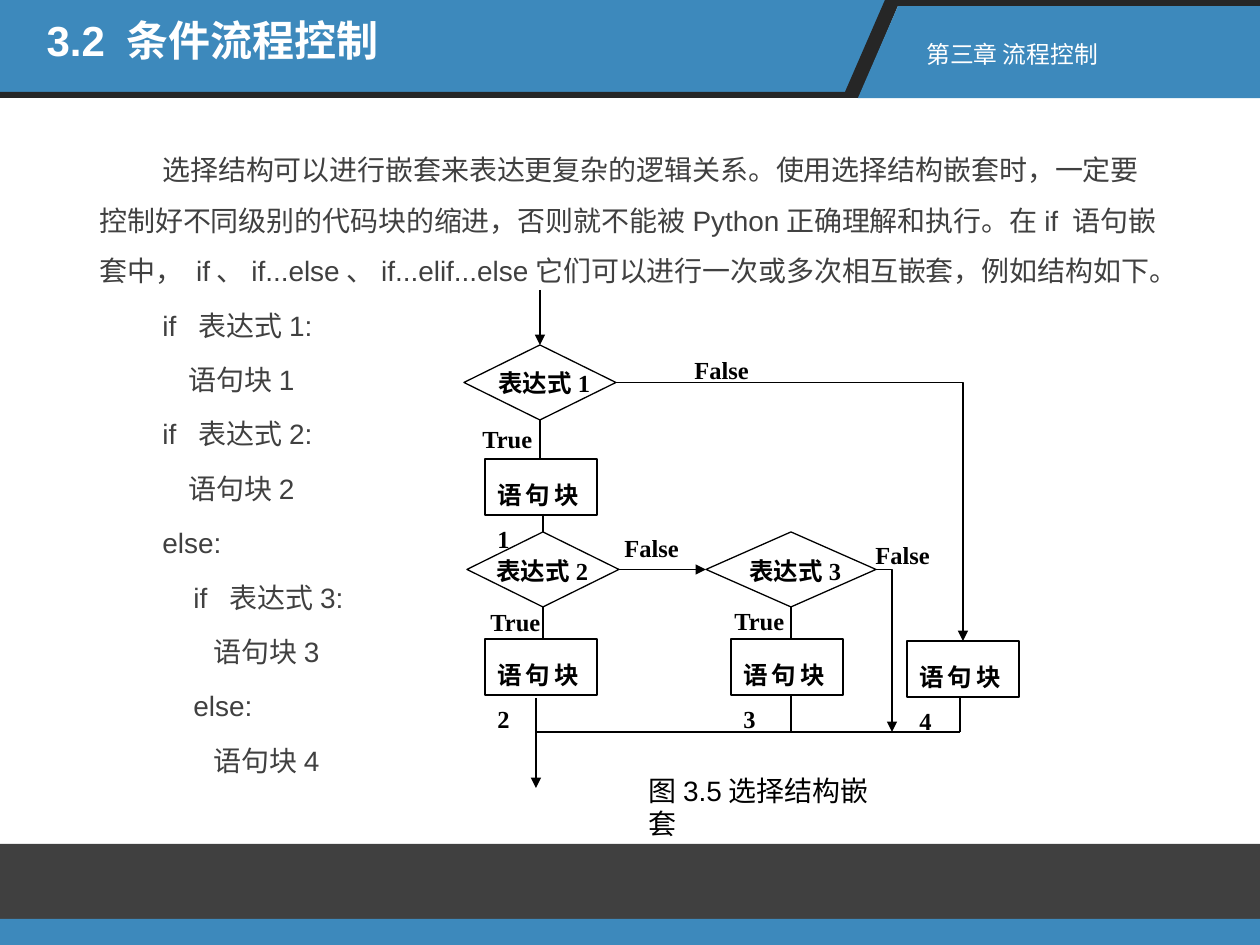
from lxml.etree import SubElement
from pptx import Presentation
from pptx.dml.color import RGBColor
from pptx.enum.shapes import MSO_CONNECTOR, MSO_SHAPE
from pptx.enum.text import MSO_ANCHOR, MSO_AUTO_SIZE, PP_ALIGN
from pptx.oxml.ns import qn
from pptx.util import Pt

PX = 7257
BLUE = RGBColor(0x3D, 0x89, 0xBC)
DARK = RGBColor(0x26, 0x26, 0x26)
GRAY = RGBColor(0x40, 0x40, 0x40)
BLACK = RGBColor(0, 0, 0)
WHITE = RGBColor(0xFF, 0xFF, 0xFF)
TOP, LEFT, BOTTOM, RIGHT = range(4)


def write(paragraph, text, size=14, font="Times New Roman", color=BLACK, bold=False,
          align=PP_ALIGN.LEFT, spacing=1.0, before=0, indent=0):
    paragraph.alignment = align
    paragraph.line_spacing = spacing
    paragraph.space_before = Pt(before)
    paragraph._p.get_or_add_pPr().set("indent", str(indent * PX))
    run = paragraph.add_run()
    run.text = text
    run.font.size = Pt(size)
    run.font.name = font
    run.font.color.rgb = color
    run.font.bold = bold


def place(kind, left, top, width, height, fill, line=None):
    shape = slide.shapes.add_shape(kind, left * PX, top * PX, width * PX, height * PX)
    shape.shadow.inherit = False
    shape.fill.solid()
    shape.fill.fore_color.rgb = fill
    if line is None:
        shape.line.fill.background()
    else:
        shape.line.color.rgb = line
        shape.line.width = Pt(0.75)
    return shape


prs = Presentation()
prs.slide_width = 1260 * PX
prs.slide_height = 945 * PX
slide = prs.slides.add_slide(prs.slide_layouts[5])

header_parts = [
    (BLUE, [(0, 0), (888, 0), (849, 92), (0, 92)]),
    (DARK, [(885, 0), (1260, 0), (1260, 6), (898, 6), (859, 98), (0, 98), (0, 92), (845, 92)]),
    (BLUE, [(898, 6), (1260, 6), (1260, 98), (858, 98)]),
]
for color, points in header_parts:
    outline = slide.shapes.build_freeform(*points[0], scale=PX)
    outline.add_line_segments(points[1:], close=True)
    band = outline.convert_to_shape()
    band.shadow.inherit = False
    band.fill.solid()
    band.fill.fore_color.rgb = color
    band.line.fill.background()

place(MSO_SHAPE.RECTANGLE, 0, 844, 1260, 75, GRAY)
place(MSO_SHAPE.RECTANGLE, 0, 919, 1260, 26, BLUE)

title = slide.shapes.title
slide.shapes._spTree.append(title._element)
title.left, title.top, title.width, title.height = 34 * PX, 14 * PX, 514 * PX, 78 * PX
title.text_frame.auto_size = MSO_AUTO_SIZE.NONE
title.text_frame.vertical_anchor = MSO_ANCHOR.TOP
write(title.text_frame.paragraphs[0], "3.2 条件流程控制", size=24, font="Arial",
      color=WHITE, bold=True, spacing=0.9)

intro = ("选择结构可以进行嵌套来表达更复杂的逻辑关系。使用选择结构嵌套时，一定要控制好不同级别的代码块的缩进，"
         "否则就不能被Python正确理解和执行。在if 语句嵌套中， if、if...else、if...elif...else"
         "它们可以进行一次或多次相互嵌套，例如结构如下。")
code_lines = [
    ("if  表达式1:", 63), ("语句块1", 89), ("if  表达式2:", 63), ("语句块2", 89), ("else:", 63),
    ("if  表达式3:", 94), ("语句块3", 114), ("else:", 94), ("语句块4", 114),
]
body = slide.shapes.add_textbox(87 * PX, 130 * PX, 1086 * PX, 705 * PX).text_frame
body.word_wrap = True
write(body.paragraphs[0], intro, size=16, font="Arial", color=GRAY, spacing=1.5,
      before=10, indent=63)
for code, indent in code_lines:
    write(body.add_paragraph(), code, size=16, font="Arial", color=GRAY, spacing=1.1,
          before=10, indent=indent)

decision1, decision2, decision3 = [
    place(MSO_SHAPE.FLOWCHART_DECISION, left, top, width, 75, WHITE, BLACK)
    for left, top, width in [(464, 345, 152), (467, 532, 152), (706, 532, 170)]
]

blocks = []
for number, (left, top) in enumerate([(485, 459), (485, 639), (731, 639), (907, 641)], 1):
    block = place(MSO_SHAPE.FLOWCHART_PROCESS, left, top, 112, 56, WHITE, BLACK)
    block.text_frame.word_wrap = True
    block.text_frame.vertical_anchor = MSO_ANCHOR.TOP
    write(block.text_frame.paragraphs[0], f"语句块{number}", bold=True,
          align=PP_ALIGN.JUSTIFY, spacing=1.5)
    blocks.append(block)

flows = [
    ((540, 290), (540, 345), None, (decision1, TOP), True),
    ((540, 420), (540, 459), (decision1, BOTTOM), None, False),
    ((543, 514), (543, 532), None, (decision2, TOP), False),
    ((543, 607), (543, 639), (decision2, BOTTOM), None, False),
    ((619, 569), (706, 569), (decision2, RIGHT), (decision3, LEFT), True),
    ((791, 607), (791, 639), (decision3, BOTTOM), None, False),
    ((616, 383), (963, 641), (decision1, RIGHT), (blocks[3], TOP), True),
    ((876, 569), (892, 732), (decision3, RIGHT), None, True),
    ((791, 695), (791, 732), None, None, False),
    ((960, 698), (960, 732), None, None, False),
    ((960, 732), (536, 732), None, None, False),
    ((536, 698), (536, 788), None, None, True),
]
for (x1, y1), (x2, y2), source, target, arrow in flows:
    bent = x1 != x2 and y1 != y2
    flow = slide.shapes.add_connector(MSO_CONNECTOR.ELBOW if bent else MSO_CONNECTOR.STRAIGHT,
                                      x1 * PX, y1 * PX, x2 * PX, y2 * PX)
    if source:
        flow.begin_connect(*source)
    if target:
        flow.end_connect(*target)
    flow.line.color.rgb = BLACK
    flow.line.width = Pt(0.75)
    properties = flow._element.spPr
    if bent:
        properties.find(qn("a:prstGeom")).set("prst", "bentConnector2")
    if arrow:
        SubElement(properties.find(qn("a:ln")), qn("a:tailEnd"), type="triangle")
    SubElement(properties, qn("a:effectLst"))

flow_labels = [
    ("表达式1", 486, 362, 126), ("表达式2", 484, 550, 126), ("表达式3", 737, 550, 126),
    ("True", 470, 418, 90), ("True", 478, 601, 90), ("True", 722, 600, 90),
    ("False", 682, 349, 90), ("False", 612, 527, 90), ("False", 863, 534, 90),
]
for label, left, top, width in flow_labels:
    frame = slide.shapes.add_textbox(left * PX, top * PX, width * PX, 43 * PX).text_frame
    frame.word_wrap = True
    write(frame.paragraphs[0], label, bold=True)

caption = slide.shapes.add_textbox(636 * PX, 767 * PX, 262 * PX, 47 * PX).text_frame
caption.word_wrap = True
write(caption.paragraphs[0], "图3.5选择结构嵌套", size=16, font="Arial")

chapter = slide.shapes.add_textbox(914 * PX, 33 * PX, 198 * PX, 42 * PX).text_frame
chapter.word_wrap = False
write(chapter.paragraphs[0], "第三章 流程控制", size=13.6, font="Arial", color=WHITE)

prs.save("out.pptx")
